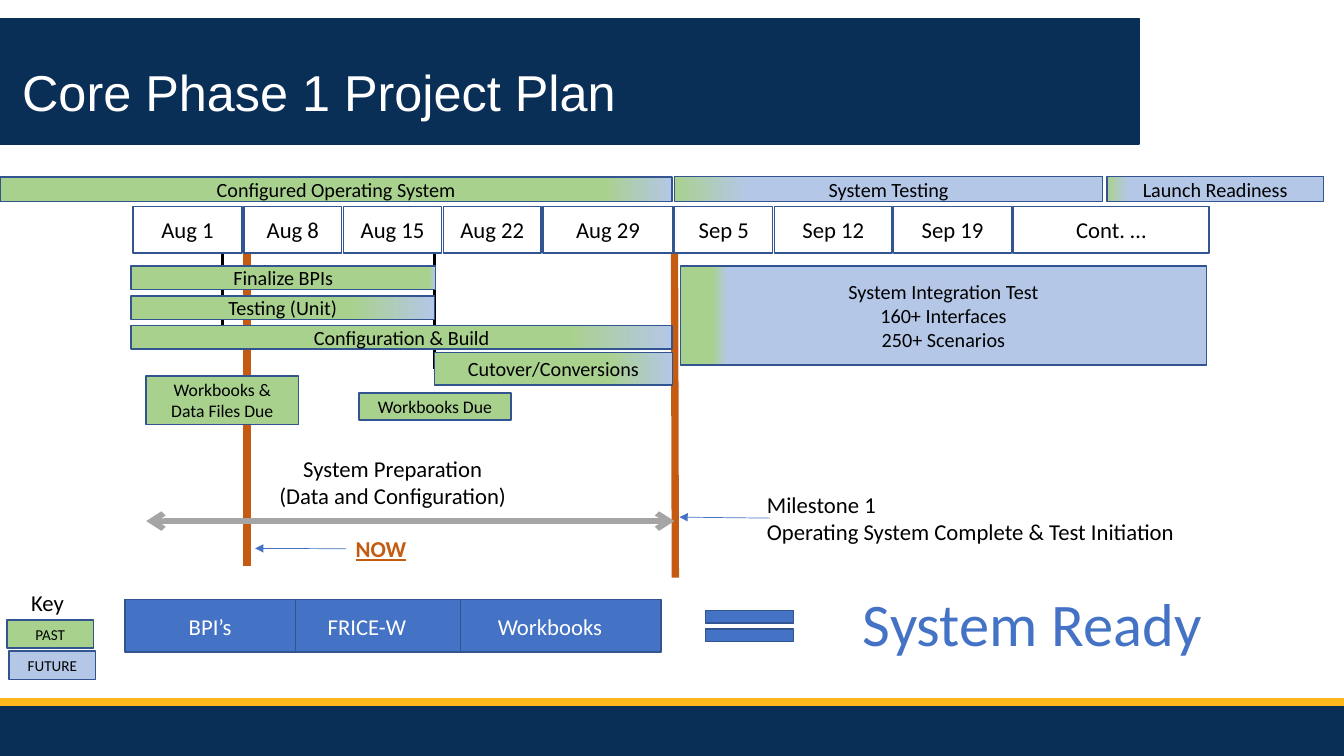
from lxml.etree import SubElement
from pptx import Presentation
from pptx.dml.color import RGBColor
from pptx.enum.shapes import MSO_CONNECTOR, MSO_SHAPE
from pptx.enum.text import MSO_ANCHOR, MSO_AUTO_SIZE, PP_ALIGN
from pptx.oxml.ns import qn
from pptx.util import Pt

TITLE = "Core Phase 1 Project Plan"
NAVY, GOLD, BLUE, EDGE = "092F57", "FFB81C", "4472C4", "325491"
PAST, FUTURE, ORANGE, GREY = "A9D18E", "B4C7E7", "C55A11", "A5A5A5"
BLACK, WHITE = "000000", "FFFFFF"

BANDS = [
    (0, 499, 960, 7.2, GOLD),
    (0, 504.7, 960, 35.3, NAVY),
    (0, 13, 813.6, 90, NAVY),
]
INPUTS = [
    ("Workbooks", 313.2, 159.1),
    ("FRICE-W", 195.1, 133.9),
    ("BPI’s", 89.3, 121.7),
]
WEEKS = [
    ("Aug 1", 78), ("Aug 8", 70), ("Aug 15", 70), ("Aug 22", 70), ("Aug 29", 93),
    ("Sep 5", 70), ("Sep 12", 84), ("Sep 19", 84), ("Cont. …", 140),
]
WEEK_LEFT, WEEK_TOP, WEEK_HEIGHT, WEEK_GAP = 95, 147.6, 33.1, 1.2
TASKS = [
    ("Finalize BPIs", 93.6, 190, 217.4, 16.8, 98, 100),
    ("System Integration Test\n160+ Interfaces\n250+ Scenarios", 486, 190, 375.8, 70.6, 6, 9),
    ("Configuration & Build", 93.6, 232.6, 386.6, 16.8, 81, 100),
    ("Cutover/Conversions", 310.3, 252, 169.9, 23, 73, 100),
    ("Testing (Unit)", 93.6, 211.5, 216.7, 16.8, 73, 100),
    ("Configured Operating System", 0, 126.5, 480.2, 17.3, 90, 100),
    ("System Testing", 481.7, 126, 306, 18, 0, 17),
    ("Launch Readiness", 790.6, 126, 154.8, 18, 0, 10),
]
NOTES = [
    ("PAST", 5, 442.8, 61.9, 20.2, PAST, 10.8),
    ("FUTURE", 6.5, 465.1, 61.9, 20.2, FUTURE, 10.8),
    ("Workbooks & Data Files Due", 104.4, 268.6, 108.7, 34.6, PAST, 12.6),
    ("Workbooks Due", 256.3, 280.8, 108.7, 19.4, PAST, 12.6),
]
LABELS = [
    ("Key", 15.1, 416.9, 38.2, 26.6, 16.2, BLACK, PP_ALIGN.LEFT, False),
    ("System Ready", 608.4, 415.4, 257.8, 59, 43.2, BLUE, PP_ALIGN.CENTER, False),
    ("Milestone 1\nOperating System Complete & Test Initiation",
     540.7, 347, 317.5, 46.8, 16.2, BLACK, PP_ALIGN.LEFT, True),
    ("NOW", 247, 378.7, 51.1, 26.6, 16.2, ORANGE, PP_ALIGN.LEFT, False),
    ("System Preparation\n(Data and Configuration)",
     191.5, 321.1, 177.8, 46.8, 16.2, BLACK, PP_ALIGN.CENTER, False),
]


def color(value):
    return RGBColor.from_string(value)


def write(shape, text, size, tint, align=PP_ALIGN.CENTER, font="Calibri"):
    shape.text_frame.text = text
    for para in shape.text_frame.paragraphs:
        para.alignment = align
        for span in para.runs:
            span.font.name = font
            span.font.size = Pt(size)
            span.font.color.rgb = color(tint)


def add_box(page, left, top, width, height, fill, edge=EDGE, kind=MSO_SHAPE.RECTANGLE):
    box = page.shapes.add_shape(kind, Pt(left), Pt(top), Pt(width), Pt(height))
    box.shadow.inherit = False
    box.fill.solid()
    box.fill.fore_color.rgb = color(fill)
    box.line.color.rgb = color(edge)
    box.line.width = Pt(1)
    box.text_frame.word_wrap = True
    box.text_frame.vertical_anchor = MSO_ANCHOR.MIDDLE
    box.text_frame.margin_top = box.text_frame.margin_bottom = 0
    return box


def add_task(page, text, left, top, width, height, past_end, future_start):
    box = add_box(page, left, top, width, height, PAST)
    box.fill.gradient()
    box.fill.gradient_angle = 0
    stops = zip(box.fill.gradient_stops, (past_end, future_start), (PAST, FUTURE))
    for stop, percent, tint in stops:
        stop.position = percent / 100
        stop.color.rgb = color(tint)
    write(box, text, 14.4, BLACK)
    return box


def add_label(page, text, left, top, width, height, size, tint, align, wrap):
    label = page.shapes.add_textbox(Pt(left), Pt(top), Pt(width), Pt(height))
    label.text_frame.word_wrap = wrap
    label.text_frame.auto_size = MSO_AUTO_SIZE.SHAPE_TO_FIT_TEXT
    write(label, text, size, tint, align)
    return label


def add_line(page, x1, y1, x2, y2, tint, width, **ends):
    line = page.shapes.add_connector(MSO_CONNECTOR.STRAIGHT, Pt(x1), Pt(y1), Pt(x2), Pt(y2))
    line.line.color.rgb = color(tint)
    line.line.width = Pt(width)
    outline = line.line._get_or_add_ln()
    for end, kind in ends.items():
        SubElement(outline, qn("a:" + end), type=kind)
    SubElement(line._element.spPr, qn("a:effectLst"))
    return line


def add_title(page):
    title = page.shapes.title
    page.shapes._spTree.append(title._element)
    title.left, title.top, title.width, title.height = Pt(0), Pt(44), Pt(828), Pt(48)
    frame = title.text_frame
    write(title, TITLE, 36, WHITE, PP_ALIGN.LEFT, "Arial")
    frame.auto_size = MSO_AUTO_SIZE.NONE
    frame.vertical_anchor = MSO_ANCHOR.MIDDLE
    frame.margin_left = Pt(15.8)
    frame.paragraphs[0].line_spacing = 0.9


def main():
    deck = Presentation()
    deck.slide_width, deck.slide_height = Pt(960), Pt(540)
    page = deck.slides.add_slide(deck.slide_layouts[5])

    for *place, fill in BANDS:
        add_box(page, *place, fill, edge=fill)
    add_title(page)

    for text, left, width in INPUTS:
        write(add_box(page, left, 428.4, width, 37.4, BLUE), text, 16.2, WHITE)
    add_box(page, 492.5, 428.4, 85.7, 37.4, BLUE, kind=MSO_SHAPE.MATH_EQUAL)

    add_line(page, 159.1, 181.4, 159.1, 249.8, BLACK, 2)
    cutover_line = add_line(page, 310.3, 174.2, 310.3, 263.5, BLACK, 2)
    add_line(page, 481.7, 147.6, 482.4, 412.6, ORANGE, 5.25)
    add_line(page, 176.4, 147.6, 176.4, 404.6, ORANGE, 5.25)

    left = WEEK_LEFT
    for text, width in WEEKS:
        write(add_box(page, left, WEEK_TOP, width, WEEK_HEIGHT, WHITE), text, 16.2, BLACK)
        left += width + WEEK_GAP

    tasks = {task[0]: add_task(page, *task) for task in TASKS}
    cutover_line.end_connect(tasks["Cutover/Conversions"], 1)

    for text, *place, fill, size in NOTES:
        write(add_box(page, *place, fill), text, size, BLACK)

    labels = {label[0]: add_label(page, *label) for label in LABELS}
    now = labels["NOW"]
    now_font = now.text_frame.paragraphs[0].runs[0].font
    now_font.bold = now_font.underline = True

    add_line(page, 104.4, 372.2, 481.7, 372.2, GREY, 4, headEnd="arrow", tailEnd="arrow")
    now_arrow = add_line(page, 247, 392, 182.2, 391.7, BLUE, 0.5, tailEnd="triangle")
    now_arrow.begin_connect(now, 1)
    add_line(page, 550.1, 370.1, 485.3, 369.4, BLUE, 0.5, tailEnd="triangle")

    deck.save("out.pptx")


if __name__ == "__main__":
    main()
